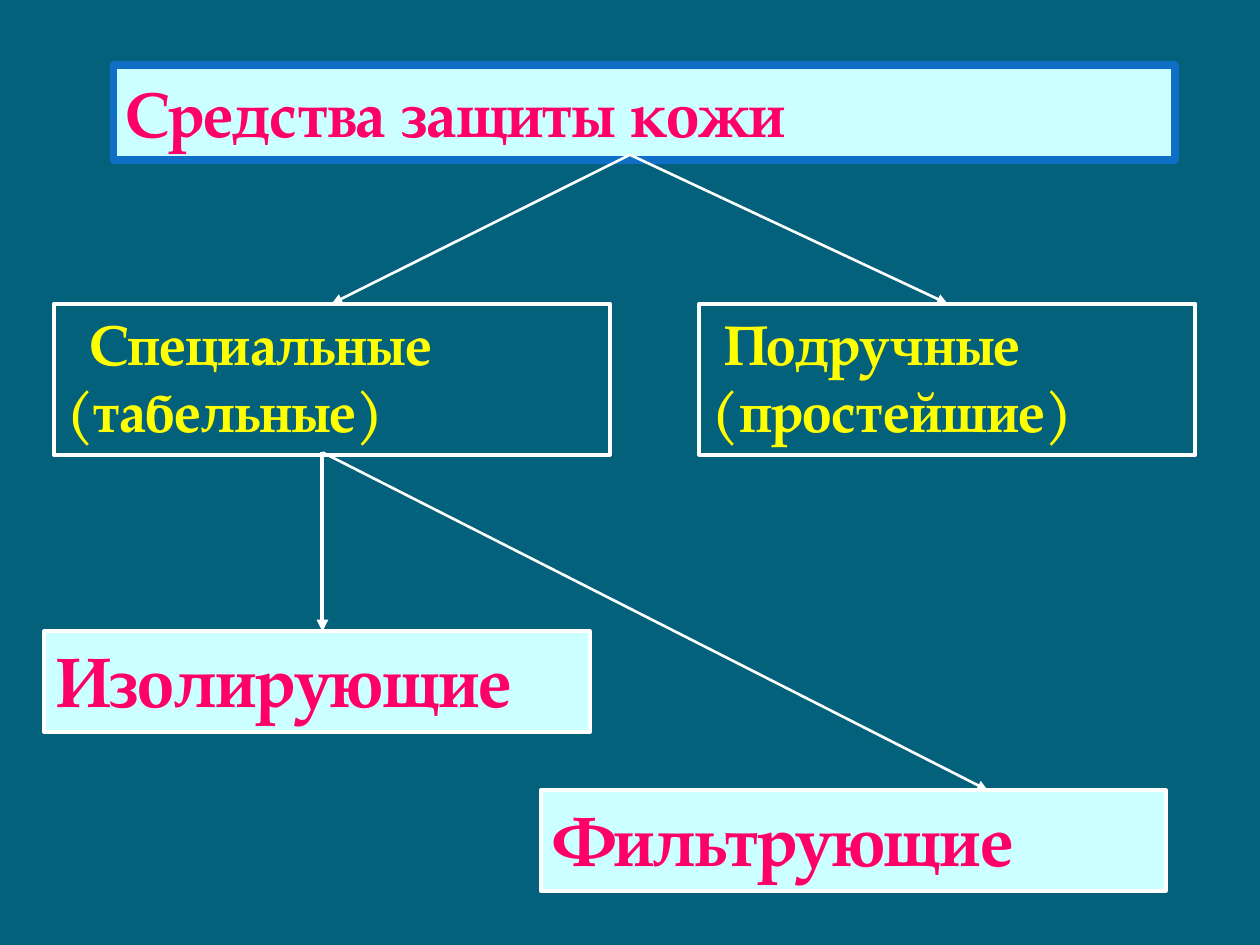
from lxml.etree import SubElement
from pptx import Presentation
from pptx.dml.color import RGBColor
from pptx.enum.shapes import MSO_CONNECTOR, MSO_SHAPE
from pptx.enum.text import MSO_ANCHOR, PP_ALIGN
from pptx.oxml.ns import qn
from pptx.util import Cm, Pt

WHITE, PALE, BLUE = "FFFFFF", "CCFFFF", "0F6FC6"
PINK, GOLD, TEAL = "FF0066", "FFFF00", "04617B"
TOP = 0

KINDS = {
    "title": dict(fill=PALE, edge=BLUE, width=4.5, ink=PINK, size=36,
                  anchor=MSO_ANCHOR.MIDDLE),
    "group": dict(fill=None, edge=WHITE, width=2.25, ink=GOLD, size=32,
                  anchor=MSO_ANCHOR.TOP),
    "leaf": dict(fill=PALE, edge=WHITE, width=2.25, ink=PINK, size=40,
                 anchor=MSO_ANCHOR.TOP),
}
BOXES = [
    ("title", (2.29, 1.32, 21.39, 1.9), ["Средства защиты кожи"], 0),
    ("group", (1.09, 6.12, 11.2, 3.05), ["Специальные (табельные)"], 0.46),
    ("group", (14.1, 6.12, 10, 3.05), ["Подручные", "(простейшие)"], 0.25),
    ("leaf", (0.89, 12.73, 11, 2.03), ["Изолирующие"], 0),
    ("leaf", (10.9, 15.93, 12.6, 2.03), ["Фильтрующие"], 0),
]
ROOT, FORK = (12.7, 3.12), (6.5, 9.12)
ARROWS = [
    (FORK, (19.91, 15.93), 1.5, None),
    (FORK, (6.5, 12.73), 2.25, None),
    (ROOT, (6.69, 6.12), 1.5, 1),
    (ROOT, (19.1, 6.12), 1.5, 2),
]


def color(code):
    return RGBColor.from_string(code)


def assign(item, values):
    for name, value in values.items():
        setattr(item, name, value)


def add_box(slide, kind, place, lines, indent):
    style = KINDS[kind]
    box = slide.shapes.add_shape(MSO_SHAPE.RECTANGLE, *map(Cm, place))
    box.shadow.inherit = False
    if style["fill"]:
        box.fill.solid()
        box.fill.fore_color.rgb = color(style["fill"])
    else:
        box.fill.background()
    box.line.color.rgb = color(style["edge"])
    box.line.width = Pt(style["width"])
    frame = box.text_frame
    assign(frame, {"word_wrap": True, "vertical_anchor": style["anchor"],
                   "text": "\n".join(lines)})
    for para in frame.paragraphs:
        para.alignment = PP_ALIGN.LEFT
        assign(para.runs[0].font, {"name": "TeX Gyre Pagella", "bold": True,
                                   "size": Pt(style["size"])})
        para.runs[0].font.color.rgb = color(style["ink"])
    if indent:
        props = frame.paragraphs[0]._p.get_or_add_pPr()
        props.set("indent", str(Cm(indent)))
    return box


def add_arrow(slide, start, end, width, goal):
    arrow = slide.shapes.add_connector(
        MSO_CONNECTOR.STRAIGHT, *map(Cm, start + end))
    if goal:
        arrow.end_connect(goal, TOP)
    arrow.line.color.rgb = color(WHITE)
    arrow.line.width = Pt(width)
    SubElement(arrow.line._get_or_add_ln(), qn("a:tailEnd"), type="triangle")
    SubElement(arrow._element.spPr, qn("a:effectLst"))


def main():
    deck = Presentation()
    assign(deck, {"slide_width": Cm(25.4), "slide_height": Cm(19.05)})
    slide = deck.slides.add_slide(deck.slide_layouts[6])
    slide.background.fill.solid()
    slide.background.fill.fore_color.rgb = color(TEAL)
    boxes = [add_box(slide, *row) for row in BOXES]
    for start, end, width, goal in ARROWS:
        add_arrow(slide, start, end, width, boxes[goal] if goal else None)
    deck.save("out.pptx")


if __name__ == "__main__":
    main()
